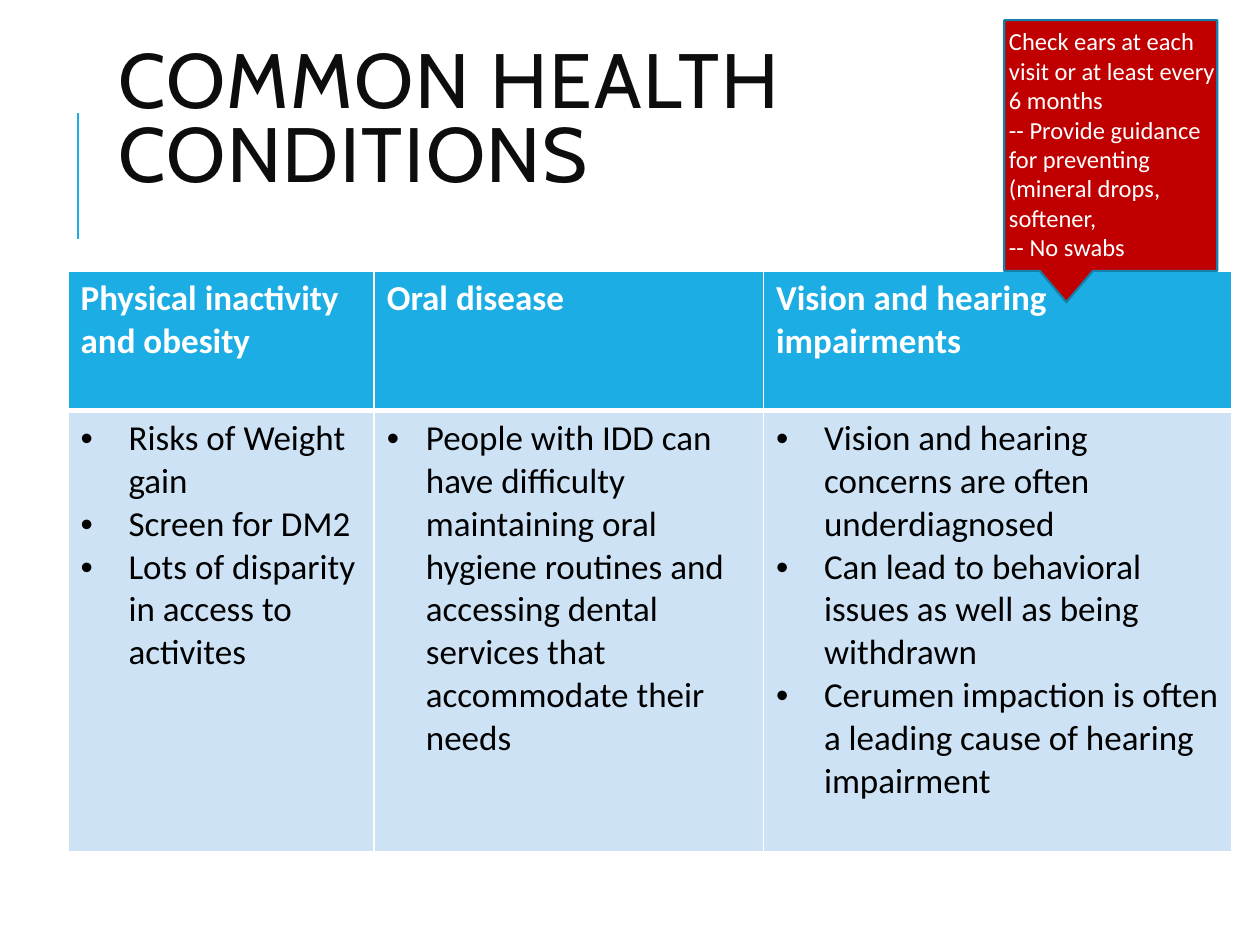
import pptx
import pptx.util
import pptx.dml.color
import pptx.enum.shapes
import pptx.enum.text
import pptx.oxml.ns
import lxml.etree

Inches = pptx.util.Inches
Pt = pptx.util.Pt
RGBColor = pptx.dml.color.RGBColor
qn = pptx.oxml.ns.qn

WHITE = RGBColor(0xFF, 0xFF, 0xFF)
BLACK = RGBColor(0x00, 0x00, 0x00)
TITLE_INK = RGBColor(0x0D, 0x0D, 0x0D)
BLUE = RGBColor(0x1C, 0xAD, 0xE4)
PALE_BLUE = RGBColor(0xCD, 0xE3, 0xF5)
RED = RGBColor(0xC0, 0x00, 0x00)
DARK_BLUE = RGBColor(0x15, 0x80, 0xA9)


def style_text(paragraph, size, color, font="Calibri", bold=False):
    for run in paragraph.runs:
        run.font.name = font
        run.font.size = Pt(size)
        run.font.bold = bold
        run.font.color.rgb = color


def add_border(cell, side, width):
    properties = cell._tc.get_or_add_tcPr()
    border = lxml.etree.Element(qn("a:" + side), w=str(Pt(width)))
    fill = lxml.etree.SubElement(border, qn("a:solidFill"))
    lxml.etree.SubElement(fill, qn("a:srgbClr"), val=str(WHITE))
    # Borders come before the fill in the cell properties
    properties.insert(len(properties) - 1, border)


presentation = pptx.Presentation()
presentation.slide_width = Inches(10)
presentation.slide_height = Inches(7.5)
slide = presentation.slides.add_slide(presentation.slide_layouts[6])

# Accent line beside the title
accent = slide.shapes.add_connector(
    pptx.enum.shapes.MSO_CONNECTOR.STRAIGHT,
    Inches(0.62), Inches(1.9), Inches(0.62), Inches(0.9))
accent.line.color.rgb = BLUE
accent.line.width = Pt(1.5)
lxml.etree.SubElement(accent._element.spPr, qn("a:effectLst"))

# Title
title = slide.shapes.add_textbox(Inches(0.84), Inches(0.16), Inches(7.97), Inches(1.64))
title.text_frame.word_wrap = True
title.text_frame.vertical_anchor = pptx.enum.text.MSO_ANCHOR.MIDDLE
title.text_frame.text = "COMMON HEALTH CONDITIONS"
heading = title.text_frame.paragraphs[0]
heading.line_spacing = 0.8
style_text(heading, 44, TITLE_INK, font="Cabin")
heading.runs[0].font._element.set("spc", "100")

# Table of conditions: heading, column width, bullet indent, points
conditions = [
    ("Physical inactivity and obesity", 2.43, 0.38, [
        "Risks of Weight gain",
        "Screen for DM2",
        "Lots of disparity in access to activites"]),
    ("Oral disease", 3.09, 0.31, [
        "People with IDD can have difficulty maintaining oral hygiene routines "
        "and accessing dental services that accommodate their needs"]),
    ("Vision and hearing impairments", 3.72, 0.38, [
        "Vision and hearing concerns are often underdiagnosed",
        "Can lead to behavioral issues as well as being withdrawn",
        "Cerumen impaction is often a leading cause of hearing impairment"]),
]
table = slide.shapes.add_table(
    2, len(conditions), Inches(0.54), Inches(2.15), Inches(9.24), Inches(4.61)).table
table.rows[0].height = Inches(1.11)
table.rows[1].height = Inches(3.5)

for column, (condition, width, indent, points) in enumerate(conditions):
    table.columns[column].width = Inches(width)
    header, body = table.cell(0, column), table.cell(1, column)

    header.text_frame.text = condition
    style_text(header.text_frame.paragraphs[0], 20, WHITE, bold=True)

    body.text_frame.text = "\n".join(points)
    for point in body.text_frame.paragraphs:
        style_text(point, 20, BLACK)
        bullet = point._p.get_or_add_pPr()
        bullet.set("marL", str(Inches(indent)))
        bullet.set("indent", str(-Inches(indent)))
        lxml.etree.SubElement(bullet, qn("a:buFont"), typeface="Arial")
        lxml.etree.SubElement(bullet, qn("a:buChar"), char="•")

    for cell, color, top, bottom in ((header, BLUE, 1, 3), (body, PALE_BLUE, 3, 1)):
        cell.fill.solid()
        cell.fill.fore_color.rgb = color
        for side, thickness in (("lnL", 1), ("lnR", 1), ("lnT", top), ("lnB", bottom)):
            add_border(cell, side, thickness)

# Callout on ear checks
callout = slide.shapes.add_shape(
    pptx.enum.shapes.MSO_SHAPE.RECTANGULAR_CALLOUT,
    Inches(7.97), Inches(0.16), Inches(1.69), Inches(1.99))
callout.shadow.inherit = False
callout.fill.solid()
callout.fill.fore_color.rgb = RED
callout.line.color.rgb = DARK_BLUE
callout.line.width = Pt(1.25)

advice = slide.shapes.add_textbox(Inches(7.91), Inches(0.16), Inches(1.87), Inches(1.99))
advice.text_frame.word_wrap = True
advice.text_frame.text = "\n".join([
    "Check ears at each visit or at least every 6 months",
    "-- Provide guidance for preventing (mineral drops, softener,",
    "-- No swabs"])
for line in advice.text_frame.paragraphs:
    style_text(line, 14, WHITE)

presentation.save("out.pptx")
